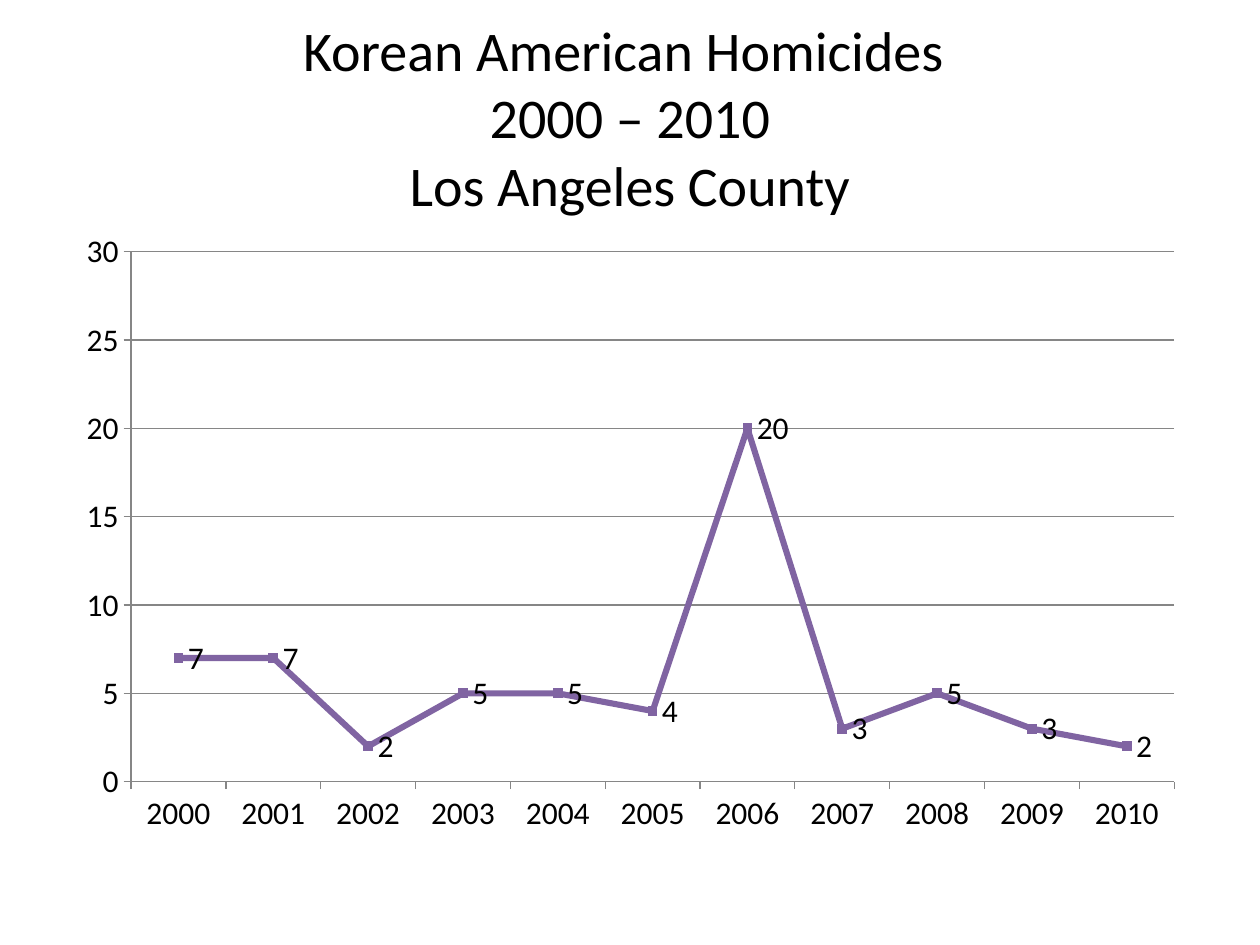
import pptx
import pptx.chart.data
import pptx.dml.color
import pptx.enum.chart
import pptx.enum.text
import pptx.oxml
import pptx.util
from lxml import etree

COLORS = {"text": "000000", "series": "8064A2", "axis": "868686"}
FONT = "Calibri"
HOMICIDES = [7, 7, 2, 5, 5, 4, 20, 3, 5, 3, 2]
PLOT_AREA = {"x": 0.06, "y": 0.05, "w": 0.92, "h": 0.85}  # shares of the chart


def color(name):
    return pptx.dml.color.RGBColor.from_string(COLORS[name])


def set_text(box, text, *, size, align):
    frame = box.text_frame
    frame.word_wrap = True
    frame.vertical_anchor = pptx.enum.text.MSO_ANCHOR.MIDDLE
    para = frame.paragraphs[0]
    para.text = text
    para.alignment = align
    para.font.size = pptx.util.Pt(size)
    para.font.name = FONT
    for span in para.runs:
        span.font.size = pptx.util.Pt(size)
        span.font.name = FONT
        span.font.color.rgb = color("text")


deck = pptx.Presentation()
deck.slide_width = pptx.util.Inches(10)
deck.slide_height = pptx.util.Inches(7.5)
page = deck.slides.add_slide(deck.slide_layouts[6])
left, width = int(deck.slide_width * 0.05), int(deck.slide_width * 0.9)
height = deck.slide_height

title = page.shapes.add_textbox(left, int(height * 0.04), width, int(height / 6))
set_text(title, "Korean American Homicides \v2000 – 2010\vLos Angeles County",
         size=32, align=pptx.enum.text.PP_ALIGN.CENTER)

# Chart
data = pptx.chart.data.CategoryChartData()
data.categories = [str(2000 + step) for step in range(len(HOMICIDES))]
data.add_series("Series 1", HOMICIDES)
chart = page.shapes.add_chart(
    pptx.enum.chart.XL_CHART_TYPE.LINE_MARKERS,
    left, int(height * 0.7 / 3), width, int(height * 0.66), data).chart
chart.has_title = False
chart.has_legend = False
chart.font.size = pptx.util.Pt(18)
chart.font.name = FONT
chart.font.color.rgb = color("text")

# Axes
values = chart.value_axis
values.minimum_scale, values.maximum_scale, values.major_unit = 0, 30, 5
values.has_major_gridlines = True
for axis in (chart.category_axis, values):
    axis.major_tick_mark = pptx.enum.chart.XL_TICK_MARK.OUTSIDE
    axis.minor_tick_mark = pptx.enum.chart.XL_TICK_MARK.NONE
for line in (chart.category_axis.format.line, values.format.line,
             values.major_gridlines.format.line):
    line.color.rgb = color("axis")
    line.width = pptx.util.Pt(0.75)

# Series
plot = chart.plots[0]
plot.vary_by_categories = False
series = plot.series[0]
series.smooth = False
series.format.line.color.rgb = color("series")
series.format.line.width = pptx.util.Pt(3.5)
series.marker.style = pptx.enum.chart.XL_MARKER_STYLE.SQUARE
series.marker.size = 5
series.marker.format.fill.solid()
series.marker.format.fill.fore_color.rgb = color("series")
series.marker.format.line.color.rgb = color("series")
labels = series.data_labels
labels.show_value = True
labels.position = pptx.enum.chart.XL_LABEL_POSITION.RIGHT

# Fixed inner plot area
namespace = pptx.oxml.ns.qn
area = plot._element.getparent()
for old in area.findall(namespace("c:layout")):
    area.remove(old)
layout = etree.Element(namespace("c:layout"))
manual = etree.SubElement(layout, namespace("c:manualLayout"))
settings = {"layoutTarget": "inner", "xMode": "edge", "yMode": "edge", **PLOT_AREA}
for tag, value in settings.items():
    etree.SubElement(manual, namespace(f"c:{tag}")).set("val", str(value))
area.insert(0, layout)

deck.save("out.pptx")
